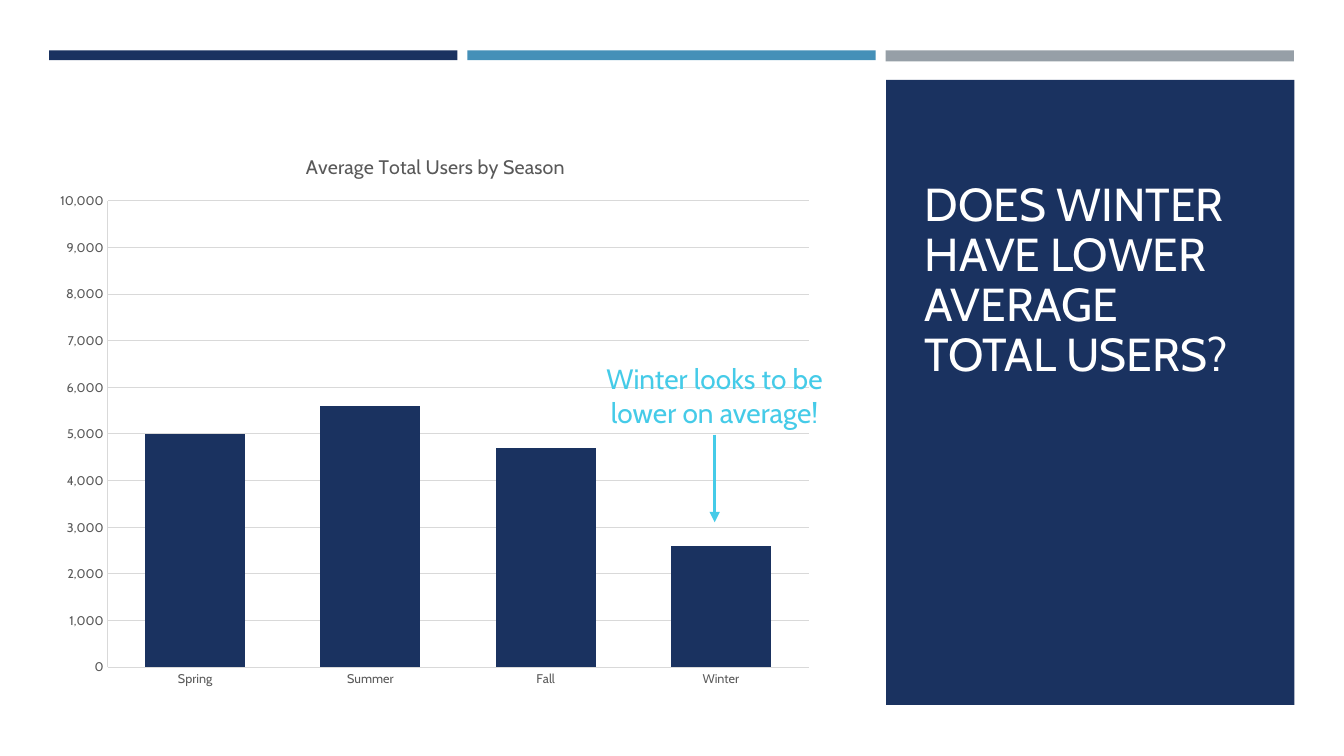
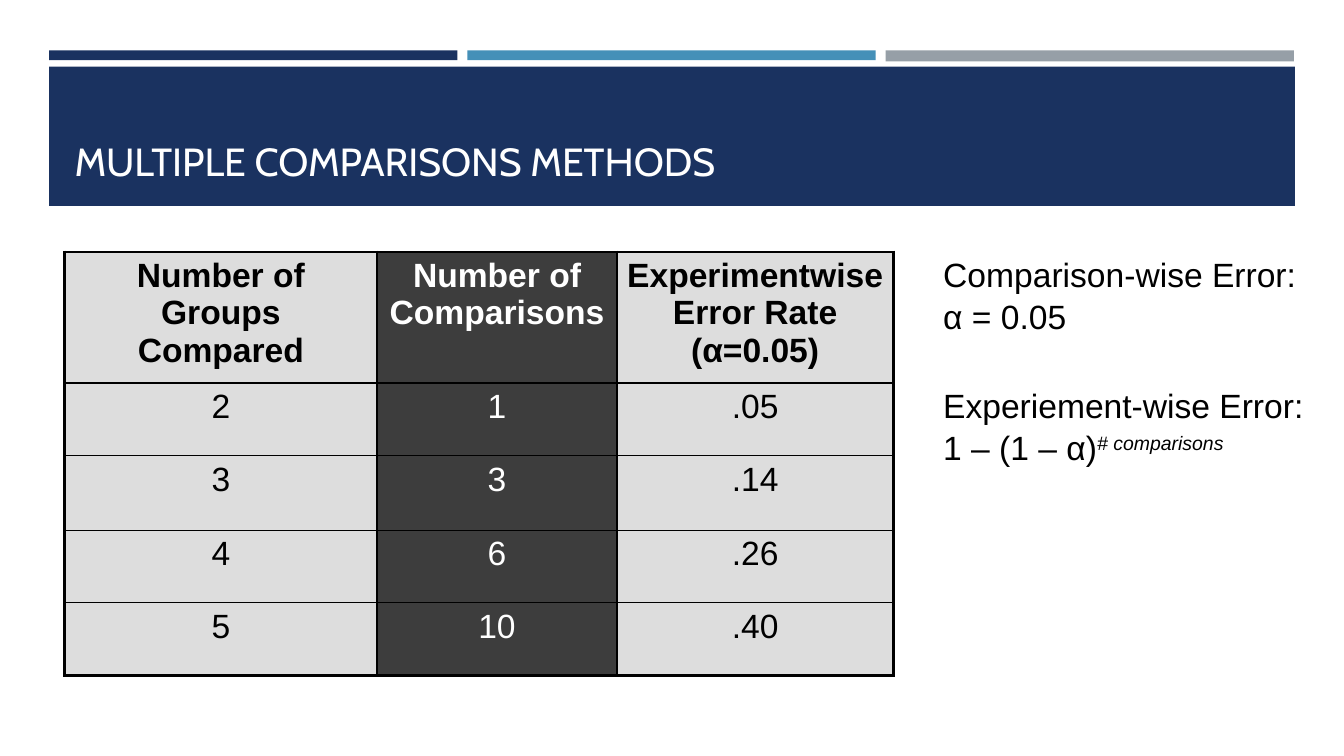
import lxml.etree
import pptx
import pptx.chart.data
import pptx.dml.color
import pptx.enum.chart
import pptx.enum.shapes
import pptx.enum.text
import pptx.oxml.ns
import pptx.util

Cm = pptx.util.Cm
Pt = pptx.util.Pt
RGBColor = pptx.dml.color.RGBColor
PP_ALIGN = pptx.enum.text.PP_ALIGN
MSO_ANCHOR = pptx.enum.text.MSO_ANCHOR
qn = pptx.oxml.ns.qn

NAVY = RGBColor(0x1A, 0x32, 0x60)
BLUE = RGBColor(0x45, 0x90, 0xB8)
GRAY = RGBColor(0x96, 0x9F, 0xA7)
CYAN = RGBColor(0x45, 0xCB, 0xE8)
WHITE = RGBColor(0xFF, 0xFF, 0xFF)
BLACK = RGBColor(0, 0, 0)
LIGHT_CELL = RGBColor(0xDD, 0xDD, 0xDD)
DARK_CELL = RGBColor(0x3D, 0x3D, 0x3D)
CHART_TEXT = RGBColor(0x59, 0x59, 0x59)
CHART_LINE = RGBColor(0xD9, 0xD9, 0xD9)
THEME_FONT = "Cabin"
BODY_FONT = "Arial"

STRIPES = [(NAVY, 0.25), (BLUE, 0.25), (GRAY, 0.28)]
STRIPE_LEFT, STRIPE_TOP, STRIPE_WIDTH, STRIPE_PITCH = 1.24, 1.27, 10.29, 10.54

SEASONS = {"Spring": 5000, "Summer": 5600, "Fall": 4700, "Winter": 2600}
COMPARISONS = [
    ("Number of Groups Compared", "Number of Comparisons",
     "Experimentwise Error Rate (α=0.05)"),
    ("2", "1", ".05"),
    ("3", "3", ".14"),
    ("4", "6", ".26"),
    ("5", "10", ".40"),
]
COLUMN_WIDTHS = [7.87, 6.05, 6.96]
ROW_HEIGHTS = [3.3, 1.83, 1.88, 1.83, 1.83]


def lengths(box):
    """Turn centimetre numbers into lengths."""
    return [Cm(number) for number in box]


def style_font(font, name, size, color, bold=False):
    """Set the face, size, colour and weight of a font."""
    font.name = name
    font.size = Pt(size)
    font.color.rgb = color
    font.bold = bold


def add_run(paragraph, text, name, size, color, bold=False):
    """Append one formatted run to a paragraph."""
    run = paragraph.add_run()
    run.text = text
    style_font(run.font, name, size, color, bold)
    return run


def add_stripes(slide):
    """Draw the three coloured stripes along the top."""
    for index, (color, height) in enumerate(STRIPES):
        left = STRIPE_LEFT + index * STRIPE_PITCH
        stripe = slide.shapes.add_shape(
            pptx.enum.shapes.MSO_SHAPE.RECTANGLE,
            *lengths((left, STRIPE_TOP, STRIPE_WIDTH, height)))
        stripe.shadow.inherit = False
        stripe.fill.solid()
        stripe.fill.fore_color.rgb = color
        stripe.line.fill.background()


def add_titled_slide(presentation, text, box, size, margins):
    """Add a slide with stripes and a title on a navy panel."""
    slide = presentation.slides.add_slide(presentation.slide_layouts[5])
    add_stripes(slide)
    title = slide.shapes.title
    title.left, title.top, title.width, title.height = lengths(box)
    title.fill.solid()
    title.fill.fore_color.rgb = NAVY
    frame = title.text_frame
    frame.auto_size = pptx.enum.text.MSO_AUTO_SIZE.NONE
    frame.word_wrap = True
    frame.vertical_anchor = MSO_ANCHOR.BOTTOM
    frame.margin_left, frame.margin_right, frame.margin_bottom = lengths(margins)
    paragraph = frame.paragraphs[0]
    paragraph.alignment = PP_ALIGN.LEFT
    paragraph.line_spacing = 0.9
    add_run(paragraph, text, THEME_FONT, size, WHITE)
    return slide


def set_layout(parent, index, **fractions):
    """Place a chart part at fractions of the chart area."""
    for layout in parent.findall(qn("c:layout")):
        parent.remove(layout)
    layout = lxml.etree.Element(qn("c:layout"))
    manual = lxml.etree.SubElement(layout, qn("c:manualLayout"))
    if "w" in fractions:
        lxml.etree.SubElement(manual, qn("c:layoutTarget")).set("val", "inner")
    for side in "xy":
        lxml.etree.SubElement(manual, qn(f"c:{side}Mode")).set("val", "edge")
    for key, fraction in fractions.items():
        lxml.etree.SubElement(manual, qn(f"c:{key}")).set("val", str(fraction))
    parent.insert(index, layout)


def add_season_chart(slide, box):
    """Draw the column chart of users by season."""
    chart_data = pptx.chart.data.CategoryChartData(number_format="#,##0")
    chart_data.categories = list(SEASONS)
    chart_data.add_series("Series 1", list(SEASONS.values()))
    chart = slide.shapes.add_chart(
        pptx.enum.chart.XL_CHART_TYPE.COLUMN_CLUSTERED,
        *lengths(box), chart_data).chart
    chart.has_legend = False
    style_font(chart.font, THEME_FONT, 10, BLACK)

    chart.has_title = True
    paragraph = chart.chart_title.text_frame.paragraphs[0]
    add_run(paragraph, "Average Total Users by Season", THEME_FONT, 14, CHART_TEXT)
    chart_space = chart.element
    set_layout(chart_space.find(".//" + qn("c:title")), 1, x=0.33, y=0.04)
    set_layout(chart_space.find(".//" + qn("c:plotArea")), 0,
               x=0.08, y=0.13, w=0.9, h=0.82)

    plot = chart.plots[0]
    plot.gap_width = 75
    plot.overlap = -25
    plot.vary_by_categories = False
    series_fill = plot.series[0].format.fill
    series_fill.solid()
    series_fill.fore_color.rgb = NAVY

    value_axis = chart.value_axis
    value_axis.minimum_scale = 0
    value_axis.maximum_scale = 10000
    value_axis.major_unit = 1000
    value_axis.has_major_gridlines = True
    value_axis.tick_labels.number_format = "#,##0"
    value_axis.tick_labels.number_format_is_linked = False
    for axis in (chart.category_axis, value_axis):
        axis.major_tick_mark = pptx.enum.chart.XL_TICK_MARK.NONE
        style_font(axis.tick_labels.font, THEME_FONT, 9, CHART_TEXT)
    for part in (chart.category_axis, value_axis, value_axis.major_gridlines):
        part.format.line.color.rgb = CHART_LINE
        part.format.line.width = Pt(0.75)


def add_callout(slide, box, arrow_length):
    """Write the remark on winter with an arrow below it."""
    left, top, width, height = box
    frame = slide.shapes.add_textbox(*lengths(box)).text_frame
    frame.word_wrap = False
    paragraph = frame.paragraphs[0]
    paragraph.alignment = PP_ALIGN.CENTER
    add_run(paragraph, "Winter looks to be", THEME_FONT, 20, CYAN)
    paragraph.add_line_break()
    add_run(paragraph, "lower on average!", THEME_FONT, 20, CYAN)

    center, bottom = left + width / 2, top + height
    arrow = slide.shapes.add_connector(
        pptx.enum.shapes.MSO_CONNECTOR.STRAIGHT,
        *lengths((center, bottom, center, bottom + arrow_length)))
    arrow.line.color.rgb = CYAN
    arrow.line.width = Pt(2.5)
    line = arrow.line._get_or_add_ln()
    lxml.etree.SubElement(line, qn("a:tailEnd")).set("type", "triangle")
    properties = arrow.element.find(qn("p:spPr"))
    lxml.etree.SubElement(properties, qn("a:effectLst"))


def set_borders(cell, widths):
    """Draw black cell borders of the given widths in points."""
    properties = cell._tc.get_or_add_tcPr()
    for side, width in widths.items():
        line = lxml.etree.SubElement(properties, qn(f"a:ln{side}"))
        line.set("w", str(Pt(width)))
        fill = lxml.etree.SubElement(line, qn("a:solidFill"))
        lxml.etree.SubElement(fill, qn("a:srgbClr")).set("val", str(BLACK))


def add_comparison_table(slide, left, top):
    """Draw the table of error rates from its top left corner."""
    last_row, last_column = len(ROW_HEIGHTS) - 1, len(COLUMN_WIDTHS) - 1
    table = slide.shapes.add_table(
        last_row + 1, last_column + 1,
        *lengths((left, top, sum(COLUMN_WIDTHS), sum(ROW_HEIGHTS)))).table
    table.first_row = False
    table.horz_banding = False
    for column, width in zip(table.columns, COLUMN_WIDTHS):
        column.width = Cm(width)
    for row, height in zip(table.rows, ROW_HEIGHTS):
        row.height = Cm(height)
    for row_index, texts in enumerate(COMPARISONS):
        for column_index, text in enumerate(texts):
            cell = table.cell(row_index, column_index)
            outer_sides = {"L": column_index == 0, "R": column_index == last_column,
                           "T": row_index == 0, "B": row_index == last_row}
            set_borders(cell, {side: 2.25 if outer else 1
                               for side, outer in outer_sides.items()})
            dark = column_index == 1
            cell.fill.solid()
            cell.fill.fore_color.rgb = DARK_CELL if dark else LIGHT_CELL
            paragraph = cell.text_frame.paragraphs[0]
            paragraph.alignment = PP_ALIGN.CENTER
            add_run(paragraph, text, BODY_FONT, 24,
                    WHITE if dark else BLACK, bold=row_index == 0)


def add_error_formulas(slide, box):
    """Write the two error definitions beside the table."""
    frame = slide.shapes.add_textbox(*lengths(box)).text_frame
    frame.word_wrap = True
    frame.margin_left = frame.margin_top = frame.margin_right = frame.margin_bottom = 0
    formulas = [("Comparison-wise Error:", "α = 0.05"),
                ("Experiement-wise Error:", "1 – (1 – α)")]
    for index, (label, formula) in enumerate(formulas):
        paragraph = frame.add_paragraph() if index else frame.paragraphs[0]
        paragraph.line_spacing = 1.05
        paragraph.space_before = Pt(33 * index)
        add_run(paragraph, label, BODY_FONT, 24, BLACK)
        paragraph.add_line_break()
        add_run(paragraph, formula, BODY_FONT, 24, BLACK)
    exponent = add_run(paragraph, "# comparisons", BODY_FONT, 24, BLACK)
    exponent.font.italic = True
    exponent._r.get_or_add_rPr().set("baseline", "30000")


def build_season_slide(presentation):
    """Build the slide with the season chart and side title."""
    slide = add_titled_slide(
        presentation, "DOES WINTER HAVE LOWER AVERAGE TOTAL USERS?",
        (22.33, 2.01, 10.29, 15.75), 33, (0.97, 1.27, 8.15))
    left, top = 1.14, 3.2
    add_season_chart(slide, (left, top, 19.63, 14.33))
    add_callout(slide, (left + 13.82, top + 5.79, 6.1, 1.96), 2.21)


def build_comparison_slide(presentation):
    """Build the slide with the comparison table and formulas."""
    slide = add_titled_slide(
        presentation, "MULTIPLE COMPARISONS METHODS",
        (1.24, 1.68, 31.39, 3.51), 28, (0.64, 0.64, 0.53))
    top = 6.35
    add_comparison_table(slide, 1.63, top)
    add_error_formulas(slide, (23.77, top, 9.6, 5.33))


def main():
    """Build and save the presentation."""
    presentation = pptx.Presentation()
    presentation.slide_width = Cm(33.87)
    presentation.slide_height = Cm(19.05)
    build_season_slide(presentation)
    build_comparison_slide(presentation)
    presentation.save("out.pptx")


if __name__ == "__main__":
    main()
